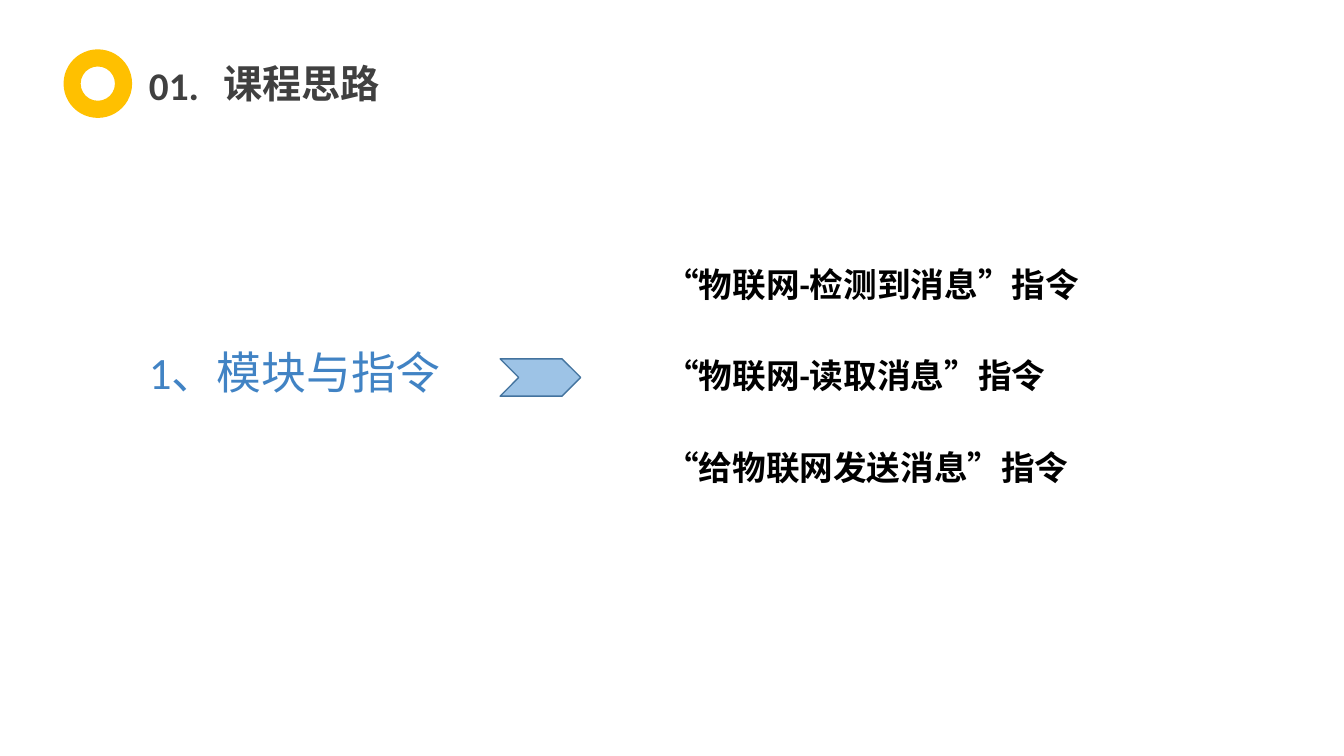
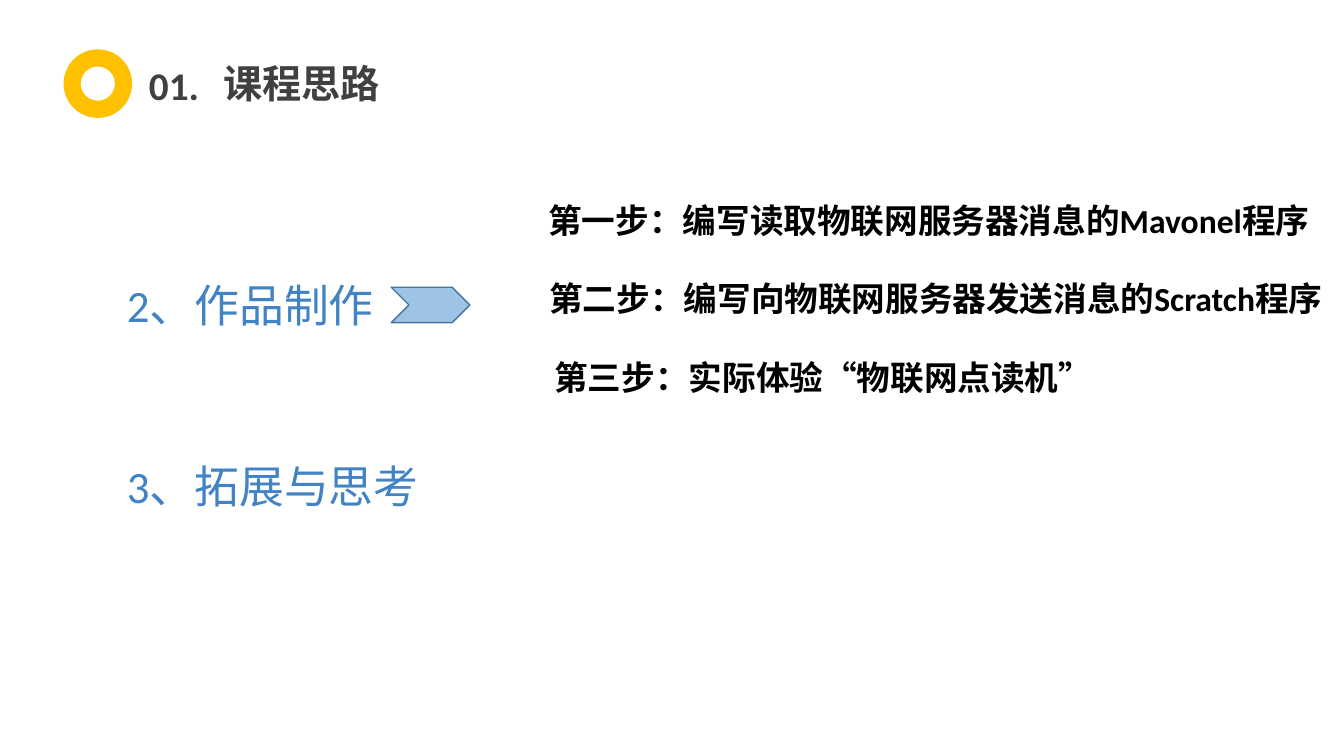
from dataclasses import dataclass

from pptx import Presentation
from pptx.dml.color import RGBColor
from pptx.enum.shapes import MSO_SHAPE
from pptx.enum.text import MSO_AUTO_SIZE, PP_ALIGN
from pptx.util import Inches, Pt

W, H = Inches(13.33), Inches(7.5)
FONT = "Calibri"
COLORS = {
    "title": "404040",
    "ring": "FFC000",
    "heading": "4183C4",
    "arrow": "9DC3E6",
    "edge": "43739E",
    "body": "000000",
}


@dataclass(frozen=True)
class Box:
    """Left, top, width and height in percent of the slide."""
    x: float
    y: float
    w: float
    h: float

    def emu(self) -> tuple[int, int, int, int]:
        """Return the box in EMU."""
        return (int(W * self.x / 100), int(H * self.y / 100),
                int(W * self.w / 100), int(H * self.h / 100))


@dataclass(frozen=True)
class Style:
    """Look of one kind of text."""
    size: int
    color: str
    bold: bool = True
    align: PP_ALIGN = PP_ALIGN.LEFT


@dataclass(frozen=True)
class Heading:
    """Numbered section heading."""
    text: str
    x: float
    y: float
    w: float


@dataclass(frozen=True)
class Item:
    """One line of the list beside the arrow."""
    text: str
    x: float
    w: float


@dataclass(frozen=True)
class Page:
    """Content of one slide."""
    headings: list[Heading]
    arrow: Box
    top: float
    step: float
    items: list[Item]


NUMBER = Style(28, "title")
TITLE = Style(28, "title", align=PP_ALIGN.CENTER)
HEADING = Style(32, "heading", bold=False)
BODY = Style(24, "body")

PAGES = [
    Page(
        [Heading("1、模块与指令", 10.35, 44.93, 23.41)],
        Box(37.21, 47.47, 6, 4.93), 34.27, 12.07,
        [Item("“物联网-检测到消息”指令", 48.76, 32.78),
         Item("“物联网-读取消息”指令", 48.76, 30.23),
         Item("“给物联网发送消息”指令", 48.76, 31.96)],
    ),
    Page(
        [Heading("2、作品制作", 8.7, 36.13, 20.03),
         Heading("3、拓展与思考", 8.7, 60, 23.41)],
        Box(29.11, 38, 5.85, 4.67), 25.73, 10.4,
        [Item("第一步：编写读取物联网服务器消息的Mavonel程序", 40.06, 58.66),
         Item("第二步：编写向物联网服务器发送消息的Scratch程序", 40.14, 59.86),
         Item("第三步：实际体验“物联网点读机”", 40.51, 42.16)],
    ),
]


def rgb(name: str) -> RGBColor:
    """Look up a palette colour."""
    return RGBColor.from_string(COLORS[name])


def add_text(s, box: Box, text: str, style: Style) -> None:
    """Add a text box with one run."""
    tf = s.shapes.add_textbox(*box.emu()).text_frame
    tf.word_wrap = True
    tf.auto_size = MSO_AUTO_SIZE.SHAPE_TO_FIT_TEXT
    p = tf.paragraphs[0]
    p.alignment = style.align
    r = p.add_run()
    r.text = text
    r.font.name = FONT
    r.font.size = Pt(style.size)
    r.font.bold = style.bold
    r.font.color.rgb = rgb(style.color)


def add_figure(s, kind: MSO_SHAPE, box: Box, fill: str, edge: str = "") -> None:
    """Add a filled preset shape, outlined if an edge colour is given."""
    sp = s.shapes.add_shape(kind, *box.emu())
    sp.shadow.inherit = False
    sp.fill.solid()
    sp.fill.fore_color.rgb = rgb(fill)
    if edge:
        sp.line.color.rgb = rgb(edge)
        sp.line.width = Pt(1)
    else:
        sp.line.fill.background()


def add_title(s) -> None:
    """Add the ring, number and title shared by the slides."""
    add_text(s, Box(15.75, 7.2, 13.35, 7.6), "课程思路", TITLE)
    add_text(s, Box(10.35, 7.47, 5.63, 7.6), "01.", NUMBER)
    add_figure(s, MSO_SHAPE.DONUT, Box(4.73, 6.53, 5.1, 9.07), "ring")


def add_page(prs, page: Page) -> None:
    """Add one slide with its headings, arrow and list."""
    s = prs.slides.add_slide(prs.slide_layouts[6])
    add_title(s)
    for head in page.headings:
        add_text(s, Box(head.x, head.y, head.w, 8.53), head.text, HEADING)
    add_figure(s, MSO_SHAPE.CHEVRON, page.arrow, "arrow", "edge")
    for i, item in enumerate(page.items):
        box = Box(item.x, page.top + i * page.step, item.w, 6.67)
        add_text(s, box, item.text, BODY)


def main() -> None:
    """Build and save the deck."""
    prs = Presentation()
    prs.slide_width, prs.slide_height = W, H
    for page in PAGES:
        add_page(prs, page)
    prs.save("out.pptx")


if __name__ == "__main__":
    main()
